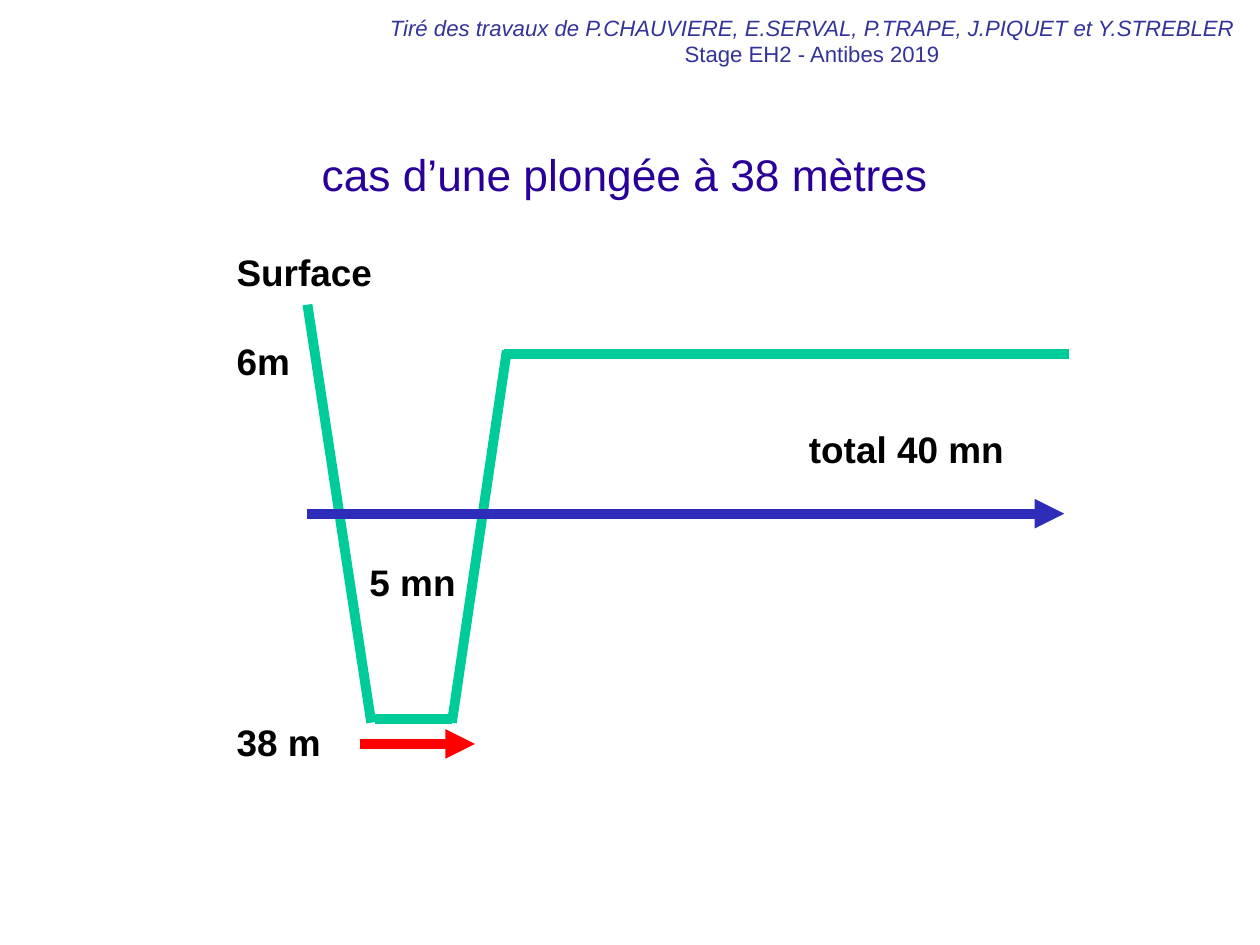
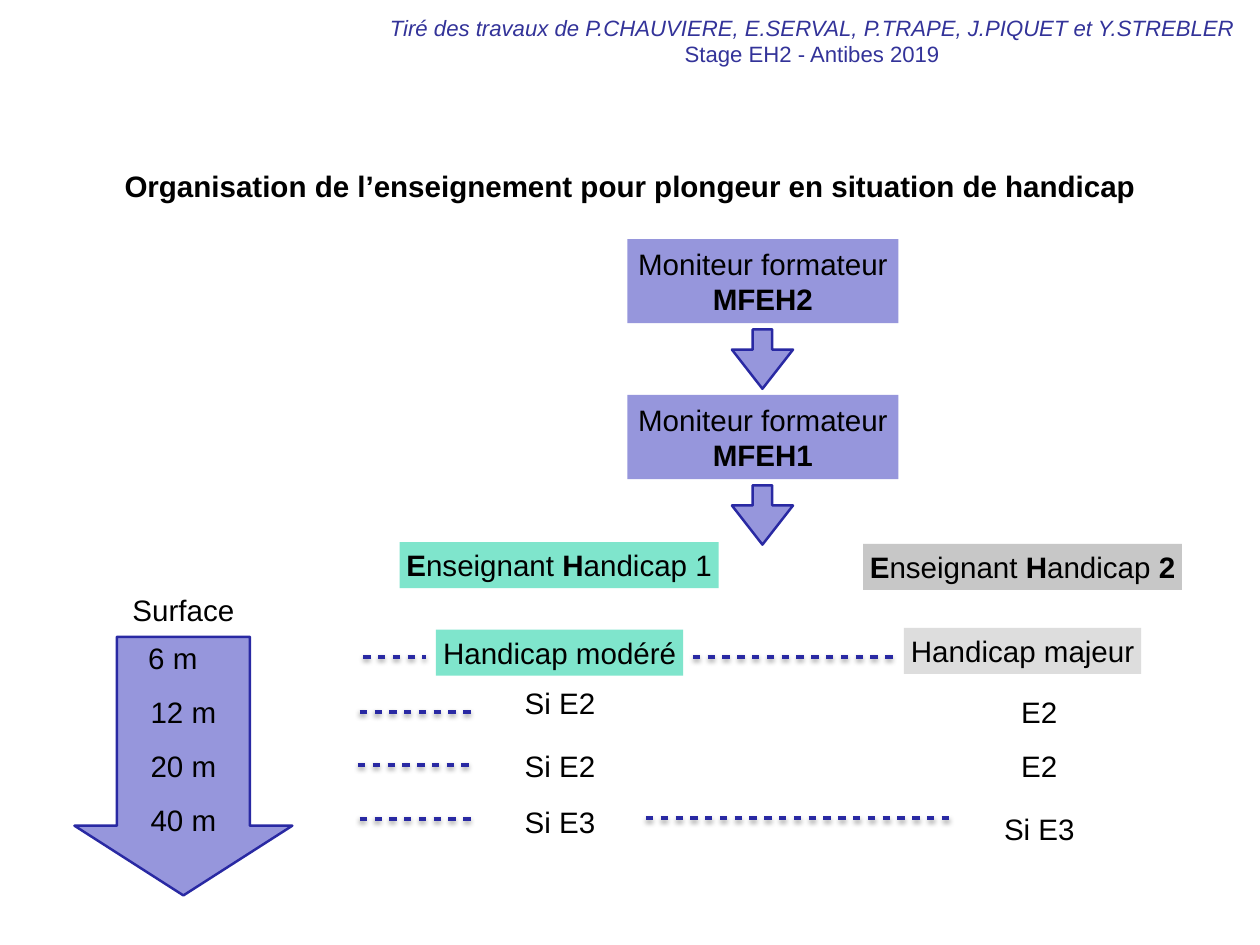
from lxml import etree
from pptx import Presentation, util as u
from pptx.dml.color import RGBColor
from pptx.enum import shapes, text
from pptx.oxml import parse_xml
from pptx.oxml.ns import nsdecls, qn

PX = 9144  # 100 px to the inch
FONT = "Arial"
BLACK = RGBColor(0x00, 0x00, 0x00)
HEADER_BLUE = RGBColor(0x33, 0x33, 0x99)
TITLE_BLUE = RGBColor(0x28, 0x00, 0x99)
TIME_BLUE = RGBColor(0x2D, 0x2D, 0xB9)
EDGE_BLUE = RGBColor(0x29, 0x29, 0xA3)
LILAC = RGBColor(0x96, 0x96, 0xDC)
GREEN = RGBColor(0x00, 0xCC, 0x99)
MINT = RGBColor(0x7F, 0xE5, 0xCC)
RED = RGBColor(0xFF, 0x00, 0x00)
GREY = RGBColor(0xC7, 0xC7, 0xC7)
LIGHT_GREY = RGBColor(0xDD, 0xDD, 0xDD)

# A line of text is a list of (text, style) runs; style holds b and/or i.
HEADER = [
    [("Tiré des travaux de P.CHAUVIERE, E.SERVAL, P.TRAPE, J.PIQUET et Y.STREBLER", "i")],
    [("Stage EH2 - Antibes 2019", "")],
]

# Dive profile: left, middle height, wording
DIVE_TITLE = (363, 196, "cas d’une plongée à 38 mètres")
DIVE_LABELS = [
    (267, 307, "Surface"),
    (267, 407, "6m"),
    (913, 507, "total 40 mn"),
    (417, 657, "5 mn"),
    (267, 838, "38 m"),
]
PROFILE = [
    (347, 344, 419, 816),
    (423, 812, 510, 812),
    (510, 816, 572, 396),
    (569, 400, 1207, 400),
]
BOTTOM_TIME = (406, 840, 536, 840)
TOTAL_TIME = (347, 580, 1201, 580)

# Teaching organisation
ORGANISATION_TITLE = "Organisation de l’enseignement pour plongeur en situation de handicap"
TRAINERS = ["MFEH2", "MFEH1"]
TRAINER_TOP, TRAINER_STEP = 270, 176
TEACHERS = [  # box, fill, level, level style
    ((451, 612, 360, 52), MINT, "1", ""),
    ((974, 614, 360, 52), GREY, "2", "b"),
]
HANDICAPS = [
    ((492, 711, 279, 52), MINT, "Handicap modéré"),
    ((1020, 709, 268, 52), LIGHT_GREY, "Handicap majeur"),
]
DEPTHS = ["6 m", "12 m", "20 m", "40 m"]
DEPTH_TOP, DEPTH_STEP, DEPTH_CENTRE = 717, 61, 207
CONDITIONS = [  # centre, top, wording
    (632, 767, "Si E2"),
    (632, 839, "Si E2"),
    (632, 902, "Si E3"),
    (1173, 778, "E2"),
    (1173, 839, "E2"),
    (1173, 910, "Si E3"),
]
DASHES = [  # from, to, height
    (410, 481, 742),
    (782, 1009, 742),
    (406, 536, 804),
    (404, 535, 864),
    (406, 536, 925),
    (729, 1075, 924),
]


def emu(lengths):
    return [length * PX for length in lengths]


def write(shape, lines, size, color=BLACK, align=text.PP_ALIGN.CENTER, wrap=False):
    frame = shape.text_frame
    frame.word_wrap = wrap
    frame.vertical_anchor = text.MSO_ANCHOR.MIDDLE
    frame.margin_left = frame.margin_right = 0
    frame.margin_top = frame.margin_bottom = 0
    for index, line in enumerate(lines):
        paragraph = frame.add_paragraph() if index else frame.paragraphs[0]
        paragraph.alignment = align
        for wording, style in line:
            run = paragraph.add_run()
            run.text = wording
            run.font.name = FONT
            run.font.size = u.Pt(size)
            run.font.color.rgb = color
            run.font.bold = "b" in style
            run.font.italic = "i" in style


def add_text(slide, box, lines, size=24, **look):
    write(slide.shapes.add_textbox(*emu(box)), lines, size, **look)


def add_left_label(slide, left, middle, wording, size, color=BLACK, style="b"):
    add_text(slide, (left, middle - 30, 700, 60), [[(wording, style)]], size,
             color=color, align=text.PP_ALIGN.LEFT, wrap=True)


def add_panel(slide, box, fill, lines):
    panel = slide.shapes.add_shape(shapes.MSO_SHAPE.RECTANGLE, *emu(box))
    panel.shadow.inherit = False
    panel.fill.solid()
    panel.fill.fore_color.rgb = fill
    panel.line.fill.background()
    write(panel, lines, 24)


def add_down_arrow(slide, box, shaft, head):
    arrow = slide.shapes.add_shape(shapes.MSO_SHAPE.DOWN_ARROW, *emu(box))
    arrow.adjustments[0], arrow.adjustments[1] = shaft, head
    arrow.shadow.inherit = False
    arrow.fill.solid()
    arrow.fill.fore_color.rgb = LILAC
    arrow.line.color.rgb = EDGE_BLUE
    arrow.line.width = u.Pt(2)


def add_line(slide, ends, color, width, arrow=False, dashed=False):
    line = slide.shapes.add_connector(shapes.MSO_CONNECTOR.STRAIGHT, *emu(ends))
    line.line.color.rgb = color
    line.line.width = u.Pt(width)
    properties = line.line._get_or_add_ln()
    if dashed:
        properties.append(parse_xml(
            f'<a:custDash {nsdecls("a")}><a:ds d="200000" sp="200000"/></a:custDash>'))
    if arrow:
        etree.SubElement(properties, qn("a:tailEnd"), type="triangle")
    effects = etree.SubElement(line._element.spPr, qn("a:effectLst"))
    if dashed:
        effects.append(parse_xml(
            f'<a:outerShdw {nsdecls("a")} blurRad="{u.Pt(4)}" dist="{u.Pt(2)}" dir="5400000"'
            ' rotWithShape="0"><a:srgbClr val="000000"><a:alpha val="38000"/></a:srgbClr>'
            '</a:outerShdw>'))


def new_slide(deck):
    slide = deck.slides.add_slide(deck.slide_layouts[6])
    add_text(slide, (430, 8, 973, 76), HEADER, 18, color=HEADER_BLUE)
    return slide


def build_dive(slide):
    add_left_label(slide, *DIVE_TITLE, 36, TITLE_BLUE, "")
    for label in DIVE_LABELS:
        add_left_label(slide, *label, 30)
    for segment in PROFILE:
        add_line(slide, segment, GREEN, 8)
    add_line(slide, BOTTOM_TIME, RED, 8, arrow=True)
    add_line(slide, TOTAL_TIME, TIME_BLUE, 8, arrow=True)


def build_organisation(slide):
    add_down_arrow(slide, (84, 719, 246, 292), 0.61, 0.32)
    add_text(slide, (133, 182, 1156, 55), [[(ORGANISATION_TITLE, "b")]])

    for index, trainer in enumerate(TRAINERS):
        top = TRAINER_TOP + index * TRAINER_STEP
        add_panel(slide, (708, top, 306, 95), LILAC,
                  [[("Moniteur formateur", "")], [(trainer, "b")]])
        add_down_arrow(slide, (826, top + 102, 69, 67), 0.32, 0.66)

    for box, fill, level, style in TEACHERS:
        add_panel(slide, box, fill, [[("E", "b"), ("nseignant ", ""), ("H", "b"),
                                      ("andicap ", ""), (level, style)]])
    for box, fill, wording in HANDICAPS:
        add_panel(slide, box, fill, [[(wording, "")]])

    depths = [(DEPTH_CENTRE - (12 if index == 0 else 0), DEPTH_TOP + index * DEPTH_STEP, depth)
              for index, depth in enumerate(DEPTHS)]
    for centre, top, wording in [(DEPTH_CENTRE, 662, "Surface")] + depths + CONDITIONS:
        add_text(slide, (centre - 65, top, 130, 52), [[(wording, "")]])

    for start, end, height in DASHES:
        add_line(slide, (start, height, end, height), EDGE_BLUE, 3, dashed=True)


def main():
    deck = Presentation()
    deck.slide_width, deck.slide_height = emu((1422, 1067))
    build_dive(new_slide(deck))
    build_organisation(new_slide(deck))
    deck.save("out.pptx")


if __name__ == "__main__":
    main()
